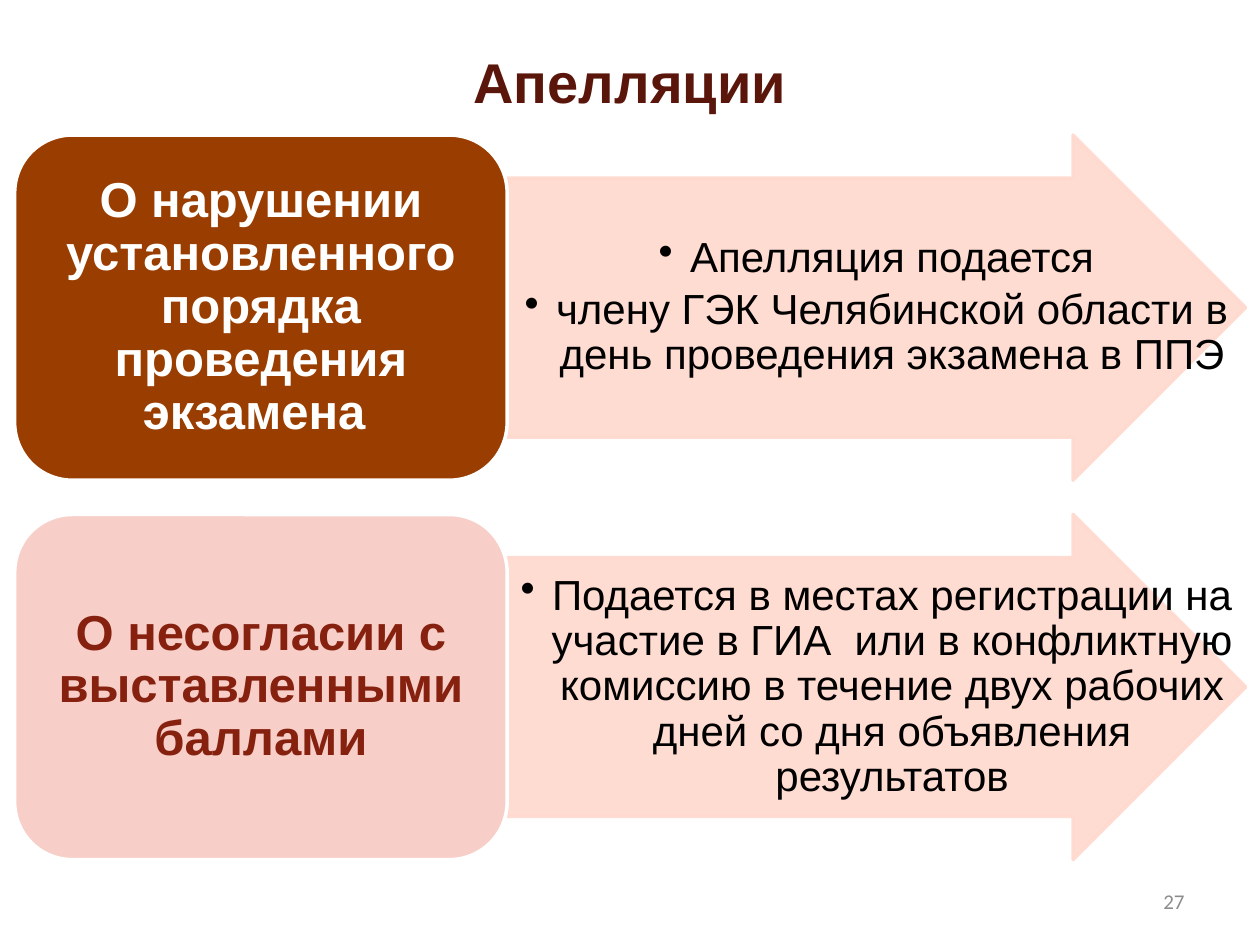
import pptx
import pptx.util
import pptx.dml.color
import pptx.enum.shapes
import pptx.enum.text
import pptx.oxml.ns
from lxml import etree

Pt = pptx.util.Pt
SHAPE = pptx.enum.shapes.MSO_SHAPE
ALIGN = pptx.enum.text.PP_ALIGN
MIDDLE = pptx.enum.text.MSO_ANCHOR.MIDDLE
qn = pptx.oxml.ns.qn

COLORS = {"title": "5A160B", "arrow": "FFD9CE", "brown": "9A3D01", "pink": "F8CFC8",
          "white": "FFFFFF", "red": "862110", "black": "000000", "grey": "8C8C8C"}

TITLE = "Апелляции"
PAGE = "27"
ROWS = [
    {"label": "О нарушении установленного порядка проведения экзамена ",
     "fill": "brown", "color": "white",
     "points": ["Апелляция подается",
                "члену ГЭК Челябинской области в день проведения экзамена в ППЭ"]},
    {"label": "О несогласии с выставленными баллами",
     "fill": "pink", "color": "red",
     "points": ["Подается в местах регистрации на участие в ГИА  или в конфликтную комиссию "
                "в течение двух рабочих дней со дня объявления результатов"]},
]

LEFT, TOP = 8.4, 77.2
LABEL_W, ARROW_W = 281.4, 422
ROW_H, ROW_STEP = 197.2, 216.8
INDENT = 18


def rgb(name):
    return pptx.dml.color.RGBColor.from_string(COLORS[name])


def place(shape, left, top, width, height):
    shape.left, shape.top, shape.width, shape.height = map(Pt, (left, top, width, height))


def write(shape, lines, size, color, font="Arial", bold=False, align=ALIGN.CENTER,
          spacing=None, margins=(7.2, 3.6)):
    tf = shape.text_frame
    tf.text = "\n".join(lines)
    tf.word_wrap = True
    tf.vertical_anchor = MIDDLE
    tf.margin_left = tf.margin_right = Pt(margins[0])
    tf.margin_top = tf.margin_bottom = Pt(margins[1])
    for p in tf.paragraphs:
        p.alignment = align
        p.line_spacing = spacing
        for r in p.runs:
            r.font.name, r.font.size, r.font.bold = font, Pt(size), bold
            r.font.color.rgb = rgb(color)
    return tf


def add_block(s, kind, box, fill, line, opacity=None):
    shape = s.shapes.add_shape(kind, *map(Pt, box))
    shape.shadow.inherit = False
    shape.fill.solid()
    shape.fill.fore_color.rgb = rgb(fill)
    shape.line.color.rgb = rgb(line)
    shape.line.width = Pt(2)
    if opacity:
        for clr in shape.element.spPr.iter(qn("a:srgbClr")):
            etree.SubElement(clr, qn("a:alpha"), val=str(opacity * 1000))
    return shape


def add_bullets(tf):
    for p in tf.paragraphs:
        p.space_after = Pt(3.6)
        pPr = p._p.get_or_add_pPr()
        pPr.set("marL", str(Pt(INDENT)))
        pPr.set("indent", str(-Pt(INDENT)))
        etree.SubElement(pPr, qn("a:buChar"), char="•")


def add_row(s, row, top):
    arrow_box = (LEFT + LABEL_W, top, ARROW_W, ROW_H)
    arrow = add_block(s, SHAPE.RIGHT_ARROW, arrow_box, "arrow", "arrow", 90)
    arrow.adjustments[0] = 0.75
    points = s.shapes.add_textbox(*map(Pt, arrow_box))
    add_bullets(write(points, row["points"], 24, "black", spacing=0.9, margins=(1.2, 1.2)))
    label = add_block(s, SHAPE.ROUNDED_RECTANGLE, (LEFT, top, LABEL_W, ROW_H),
                      row["fill"], "white")
    write(label, [row["label"]], 28, row["color"], bold=True, spacing=0.9, margins=(8.4, 4.2))


def main():
    prs = pptx.Presentation()
    prs.slide_width, prs.slide_height = Pt(720), Pt(540)
    s = prs.slides.add_slide(prs.slide_layouts[5])
    title = s.shapes.title
    place(title, 36, 21, 648, 51)
    write(title, [TITLE], 32, "title", bold=True)
    for i, row in enumerate(ROWS):
        add_row(s, row, TOP + i * ROW_STEP)
    number = s.shapes.add_textbox(Pt(516), Pt(500.5), Pt(168), Pt(28.8))
    write(number, [PAGE], 12, "grey", font="Calibri", align=ALIGN.RIGHT)
    prs.save("out.pptx")


if __name__ == "__main__":
    main()
